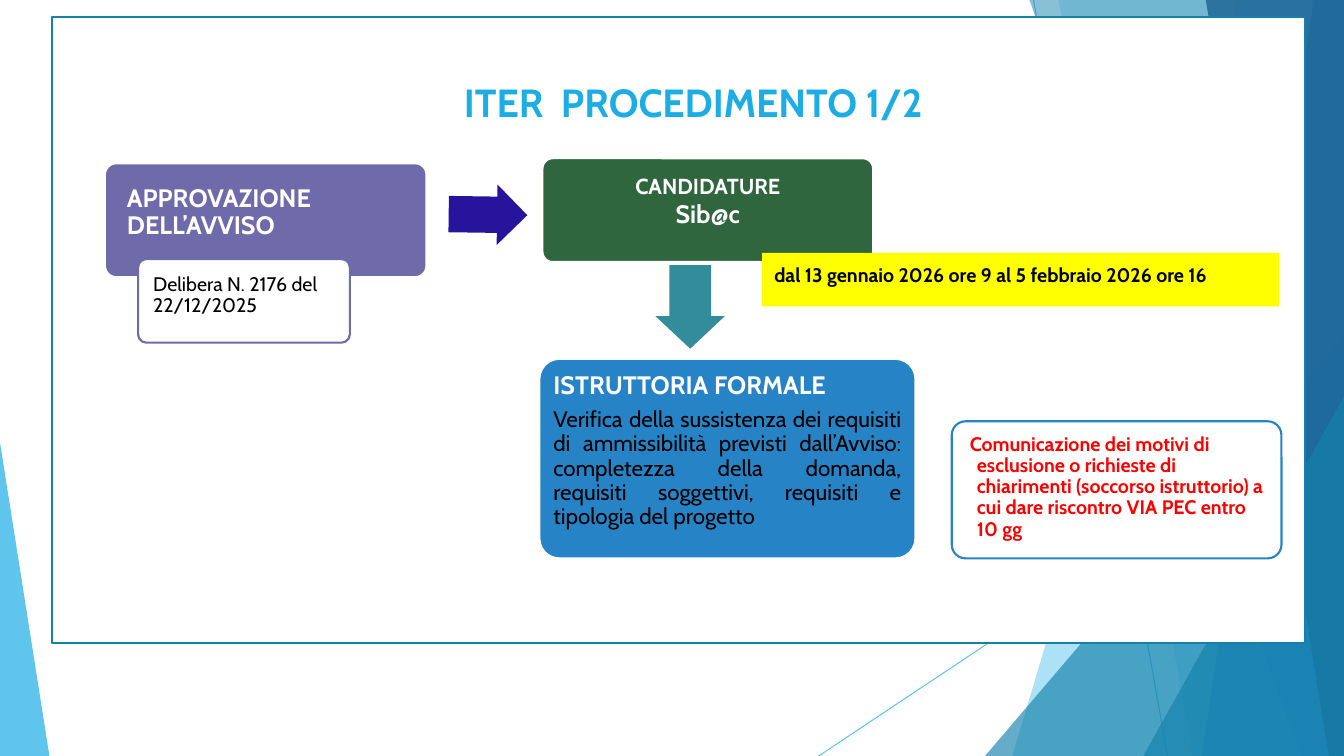
"""Builds the slide on the steps of the application procedure, part 1 of 2."""
from lxml.etree import SubElement
from pptx import Presentation
from pptx.dml.color import RGBColor
from pptx.enum.shapes import MSO_CONNECTOR, MSO_SHAPE as Preset
from pptx.enum.text import MSO_ANCHOR, PP_ALIGN as Align
from pptx.oxml.ns import qn
from pptx.util import Inches, Pt

WIDTH, HEIGHT = 13.33, 7.5
CORNER_INSET = 0.03
BLACK = RGBColor(0x00, 0x00, 0x00)
WHITE = RGBColor(0xFF, 0xFF, 0xFF)
RED = RGBColor(0xFF, 0x00, 0x00)
YELLOW = RGBColor(0xFF, 0xFF, 0x00)
SKY = RGBColor(0x1C, 0xAD, 0xE4)
OCEAN = RGBColor(0x14, 0x82, 0xAC)
FRAME_BLUE = RGBColor(0x15, 0x80, 0xA9)
BLUE = RGBColor(0x26, 0x83, 0xC6)
NAVY = RGBColor(0x1D, 0x62, 0x94)
PURPLE = RGBColor(0x6F, 0x6A, 0xAA)
INDIGO = RGBColor(0x28, 0x14, 0x9C)
GREEN = RGBColor(0x2F, 0x66, 0x3E)
TEAL = RGBColor(0x32, 0x8C, 0x99)


def fade(shape, opacity):
    colour = shape._element.spPr.find(".//" + qn("a:srgbClr"))
    SubElement(colour, qn("a:alpha")).set("val", str(opacity * 1000))


def paint(shape, fill, line=None):
    shape.shadow.inherit = False
    shape.fill.solid()
    shape.fill.fore_color.rgb = fill
    if line is None:
        shape.line.fill.background()
    else:
        shape.line.color.rgb = line
        shape.line.width = Pt(1.5)


deck = Presentation()
deck.slide_width, deck.slide_height = Inches(WIDTH), Inches(HEIGHT)
page = deck.slides.add_slide(deck.slide_layouts[6])
shapes = page.shapes

for start_x, start_y, end_x in [(10.25, 0, 11.58), (WIDTH, 4.03, 8.12)]:
    ray = shapes.add_connector(MSO_CONNECTOR.STRAIGHT, Inches(start_x), Inches(start_y),
                               Inches(end_x), Inches(HEIGHT))
    ray.line.color.rgb = SKY
    ray.line.width = Pt(0.75)
    fade(ray, 70)
    SubElement(ray._element.spPr, qn("a:effectLst"))

facets = [
    (12.28, 0, 10.04, SKY, 36),
    (10.5, 0, 11.83, SKY, 20),
    (WIDTH, 3.33, 9.77, OCEAN, 66),
    (10.21, 0, 12.91, OCEAN, 50),
    (13.03, 0, 11.92, BLUE, 70),
    (11.96, 0, 13.18, NAVY, 80),
    (WIDTH, 3.93, 11.34, OCEAN, 66),
    (0, 4.39, 0.49, SKY, 70),
]
for top_x, top_y, bottom_x, colour, opacity in facets:
    if top_y:
        facet = shapes.add_shape(Preset.ISOSCELES_TRIANGLE, Inches(min(top_x, bottom_x)),
                                 Inches(top_y), Inches(abs(top_x - bottom_x)),
                                 Inches(HEIGHT - top_y))
        facet.adjustments[0] = 1 if top_x else 0
    else:
        builder = shapes.build_freeform(Inches(top_x), 0)
        builder.add_line_segments([(Inches(WIDTH), 0), (Inches(WIDTH), Inches(HEIGHT)),
                                   (Inches(bottom_x), Inches(HEIGHT))])
        facet = builder.convert_to_shape()
    paint(facet, colour)
    fade(facet, opacity)

frame = shapes.add_shape(Preset.RECTANGLE, Inches(0.52), Inches(0.17),
                         Inches(12.42), Inches(6.21))
paint(frame, WHITE, FRAME_BLUE)

cards = [
    ((1.04, 1.62, 3.19, 1.13), PURPLE, WHITE, 0.22, 0.9,
     [("APPROVAZIONE DELL’AVVISO", 18, WHITE, True, Align.LEFT)]),
    ((5.38, 1.57, 3.28, 1.03), GREEN, WHITE, 0.22, 0.7,
     [("CANDIDATURE", 15.5, WHITE, True, Align.CENTER),
      ("Sib@c", 18, WHITE, True, Align.CENTER)]),
    ((7.56, 2.51, 5.13, 0.53), YELLOW, None, 0.12, 0.9,
     [("dal 13 gennaio 2026 ore 9 al 5 febbraio 2026 ore 16", 14, BLACK, True, Align.LEFT)]),
    ((5.35, 3.56, 3.73, 1.98), BLUE, WHITE, 0.14, 0.9,
     [("ISTRUTTORIA FORMALE", 18, WHITE, True, Align.LEFT),
      ("Verifica della sussistenza dei requisiti di ammissibilità previsti dall’Avviso: "
       "completezza della domanda, requisiti soggettivi, requisiti e tipologia del progetto",
       16, BLACK, False, Align.JUSTIFY)]),
    ((9.44, 4.18, 3.27, 1.36), WHITE, BLUE, 0.13, 0.9,
     [("Comunicazione dei motivi di esclusione o richieste di chiarimenti (soccorso "
       "istruttorio) a cui dare riscontro VIA PEC entro 10 gg", 14, RED, True, Align.LEFT)]),
    ((1.37, 2.57, 2.1, 0.83), WHITE, PURPLE, 0.15, 0.9,
     [("Delibera N. 2176 del 22/12/2025", 14, BLACK, False, Align.LEFT)]),
    ((0.93, 0.61, 11.89, 0.8), WHITE, WHITE, 0.22, 0.9,
     [("ITER  PROCEDIMENTO 1/2", 28, SKY, True, Align.CENTER)]),
]
for place, fill, line, inset, spacing, lines in cards:
    preset = Preset.ROUNDED_RECTANGLE if line else Preset.RECTANGLE
    card = shapes.add_shape(preset, *map(Inches, place))
    paint(card, fill, line)
    if line:
        card.adjustments[0] = 0.1
        inset -= CORNER_INSET * place[3]
    card_text = card.text_frame
    card_text.word_wrap = True
    card_text.vertical_anchor = MSO_ANCHOR.TOP
    card_text.margin_left = card_text.margin_right = Inches(inset)
    card_text.margin_top = card_text.margin_bottom = Inches(inset)
    for index, (text, size, colour, bold, align) in enumerate(lines):
        para = card_text.add_paragraph() if index else card_text.paragraphs[0]
        para.text = text
        para.alignment = align
        para.line_spacing = spacing
        para.space_after = Pt(6 if index < len(lines) - 1 else 0)
        if colour == RED:
            properties = para._p.get_or_add_pPr()
            properties.set("marL", str(Inches(0.12)))
            properties.set("indent", str(Inches(-0.07)))
        para.font.name = "Cabin"
        para.font.size = Pt(size)
        para.font.bold = bold
        para.font.color.rgb = colour

for place, rotation, head, colour in [((4.45, 1.83, 0.78, 0.6), 0.8, 0.5, INDIGO),
                                      ((6.43, 2.7, 0.83, 0.69), 90, 0.47, TEAL)]:
    arrow = shapes.add_shape(Preset.RIGHT_ARROW, *map(Inches, place))
    arrow.rotation = rotation
    arrow.adjustments[0] = 0.6
    arrow.adjustments[1] = head
    paint(arrow, colour)

deck.save("out.pptx")
